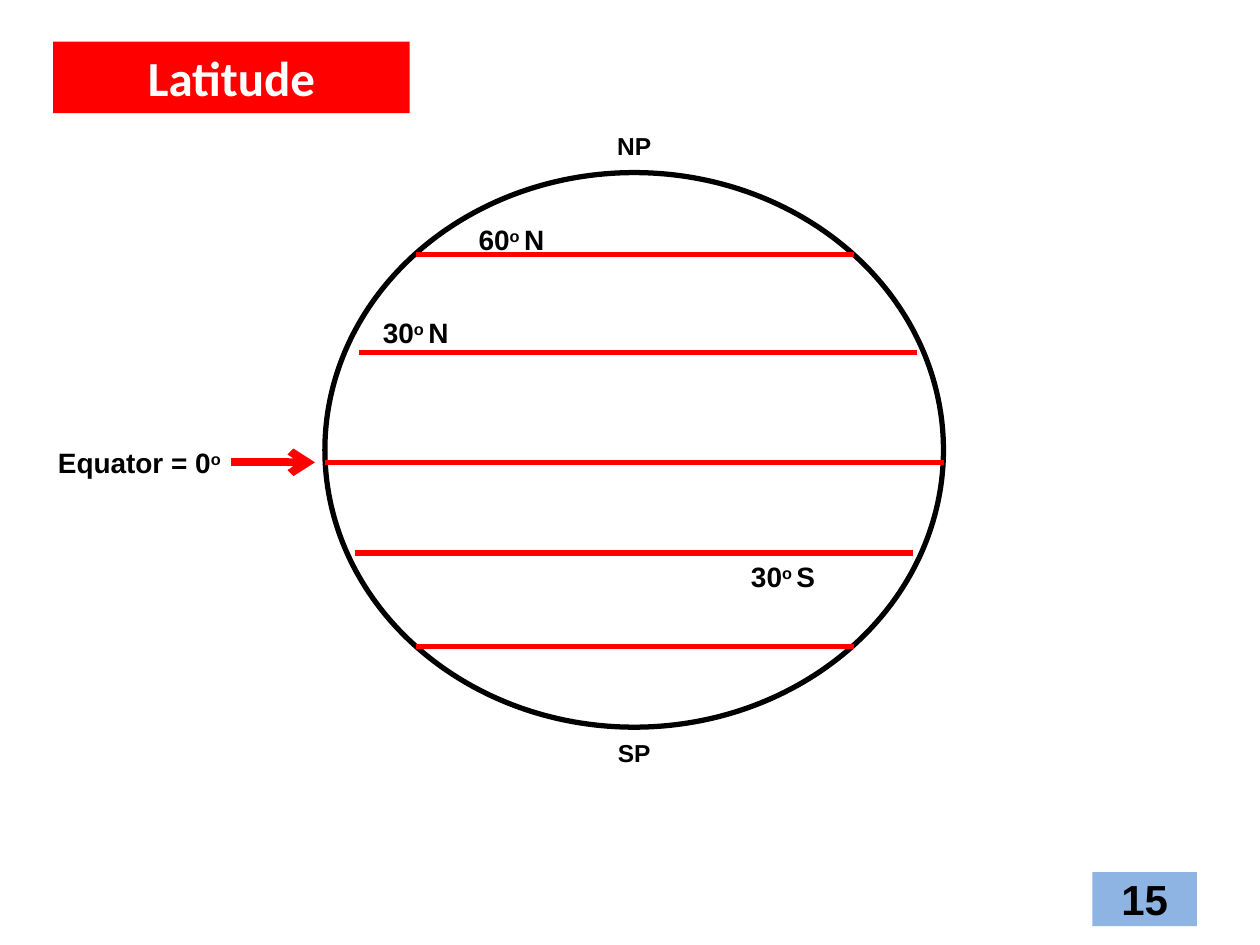
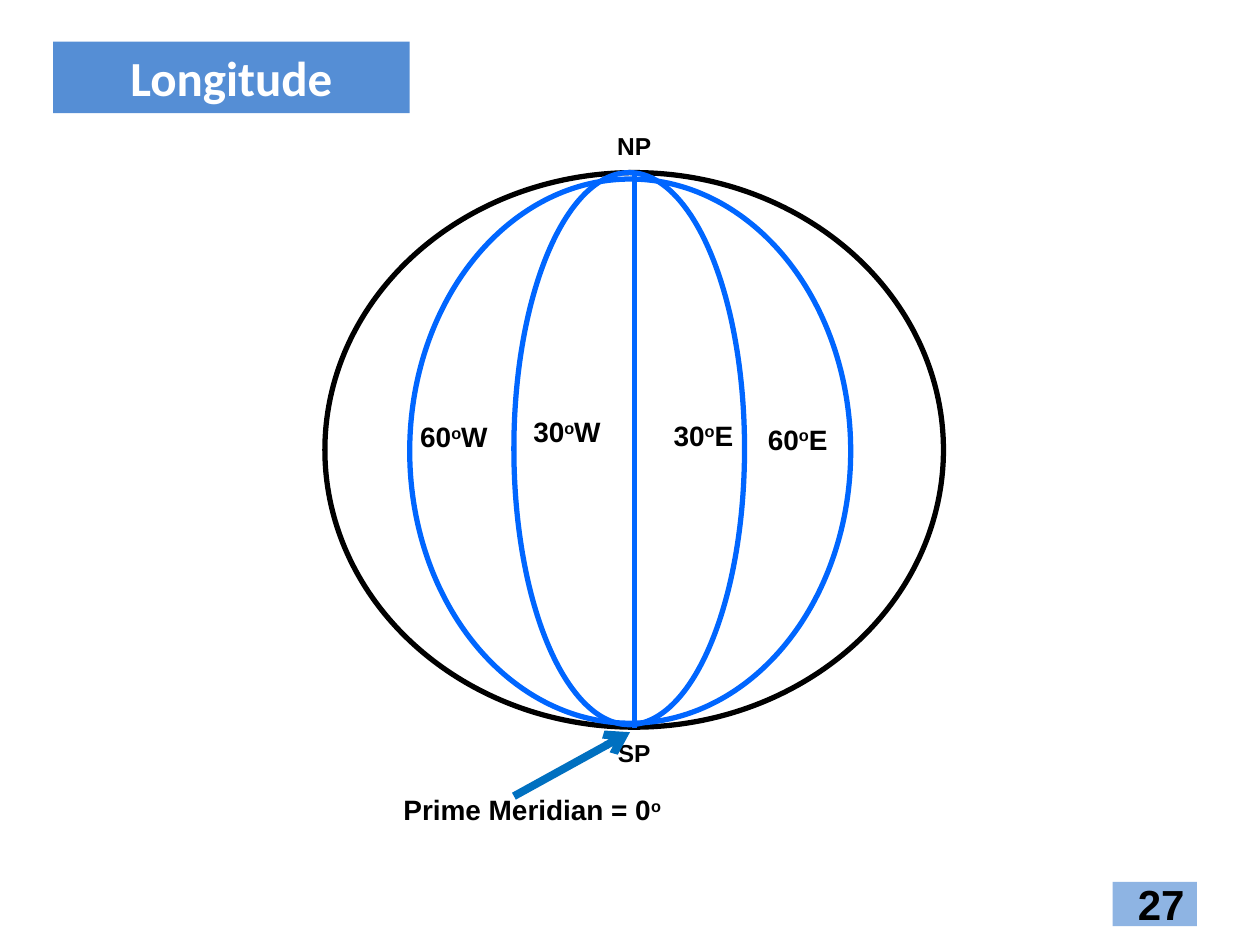
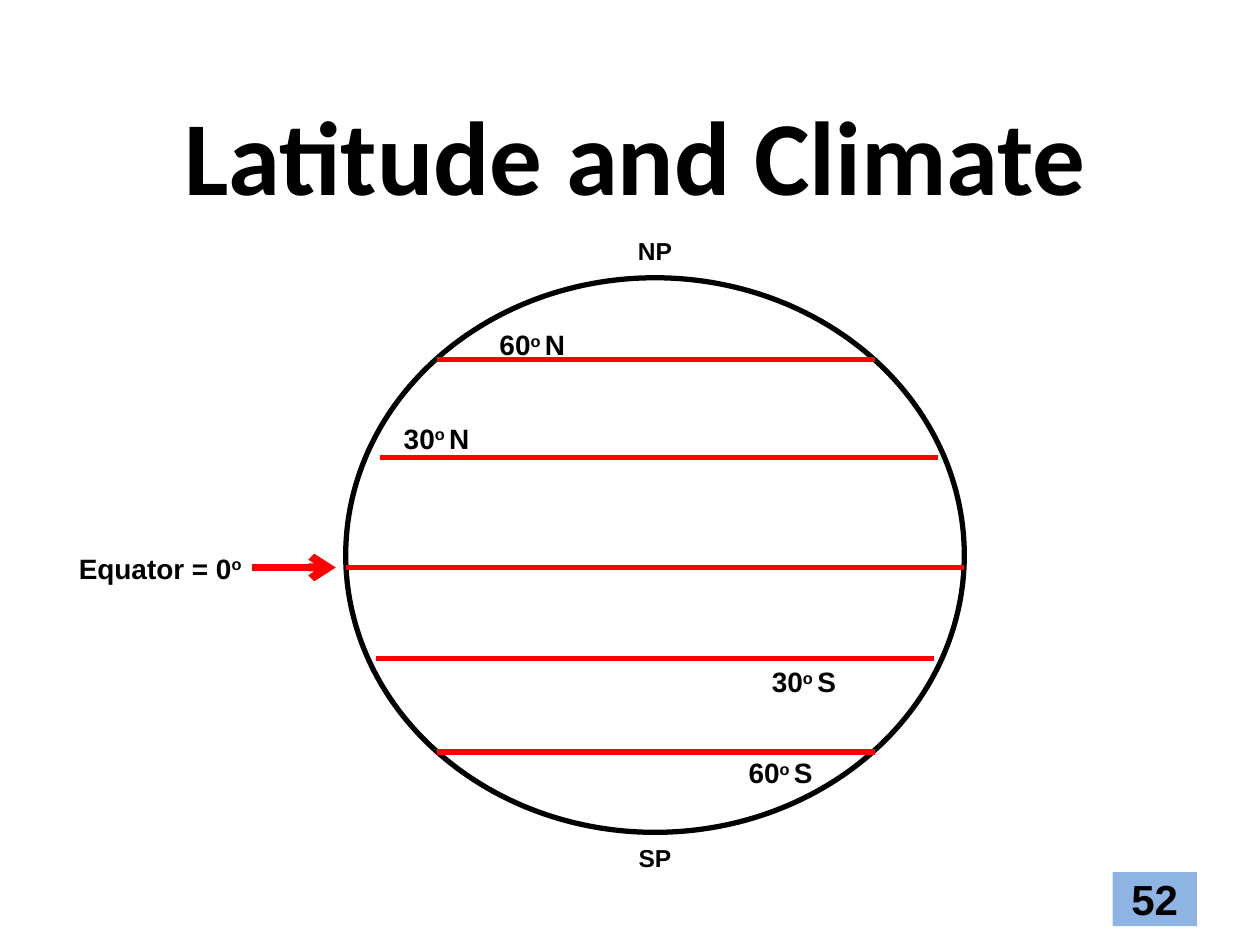
from dataclasses import dataclass

from lxml import etree
from pptx import Presentation
from pptx.dml.color import RGBColor
from pptx.enum.shapes import MSO_CONNECTOR, MSO_SHAPE
from pptx.enum.text import MSO_ANCHOR, PP_ALIGN
from pptx.oxml.ns import qn
from pptx.util import Cm, Pt

RECT, OVAL = MSO_SHAPE.RECTANGLE, MSO_SHAPE.OVAL
STRAIGHT = MSO_CONNECTOR.STRAIGHT
LEFT, CENTER, RIGHT = PP_ALIGN.LEFT, PP_ALIGN.CENTER, PP_ALIGN.RIGHT
TOP, MIDDLE = MSO_ANCHOR.TOP, MSO_ANCHOR.MIDDLE


@dataclass(frozen=True)
class Theme:
    black: str = "000000"
    white: str = "FFFFFF"
    red: str = "FF0000"
    blue: str = "558ED5"
    meridian: str = "0066FF"
    pointer: str = "0070C0"
    badge: str = "8EB4E3"
    heading_font: str = "Calibri"
    body_font: str = "Arial"
    cover: int = 60
    heading: int = 28
    number: int = 24
    label: int = 16
    pole: int = 14
    thin: float = 3
    thick: float = 4.5


T = Theme()

BANNER = (1.07, 0.84, 7.19, 1.44)
COVER = (3.18, 1.7, 19.25, 2.82)
BADGE_RIGHT, BADGE_BOTTOM = 24.13, 18.67
GLOBE = (6.55, 3.48, 12.47, 11.18)
GLOBE_SHIFT = (0.42, 2.12)
AXIS_X = GLOBE[0] + GLOBE[2] / 2

POLES = [("NP", 2.54), ("SP", 14.78)]
POLE_SIZE = (2.21, 0.99)

PARALLELS = [
    (6.55, 9.32, 12.47),
    (8.38, 5.13, 8.84),
    (8.38, 13.04, 8.84),
    (7.16, 11.15, 11.25),
    (7.24, 7.11, 11.25),
]
LATITUDES = [("60^o ^N", 9.55, 4.39), ("30^o ^N", 7.62, 6.27), ("30^o ^S", 15.04, 11.18)]
SOUTH_60 = ("60^o ^S", 14.57, 13.02)
LATITUDE_SIZE = (2.95, 1.09)
EQUATOR = ("Equator = 0^o", (1.07, 8.89, 4.24, 0.99))
EQUATOR_ARROW = (4.65, 9.32, 6.35, 9.32)

MERIDIANS = [(10.36, 3.48, 4.65, 11.13), (8.26, 3.61, 8.89, 10.97)]
LONGITUDES = [
    ("30^o^W", 10.59, 8.26),
    ("30^o^E", 13.34, 8.33),
    ("60^o^W", 8.31, 8.36),
    ("60^o^E", 15.24, 8.41),
]
LONGITUDE_SIZE = (1.68, 1.88)
PRIME = ("Prime Meridian = 0^o", (6.78, 15.88, 7.9, 1.09))
PRIME_LINE = (AXIS_X, 3.51, AXIS_X, 14.68)
PRIME_ARROW = (10.36, 16.05, 12.7, 14.76)


def rgb(color):
    return RGBColor.from_string(color)


def write(sp, text, size=T.label, font=T.body_font, color=T.black,
          align=LEFT, anchor=TOP, inset=None, after=0):
    tf = sp.text_frame
    tf.word_wrap = True
    tf.vertical_anchor = anchor
    if inset is not None:
        tf.margin_left = tf.margin_right = tf.margin_top = tf.margin_bottom = Cm(inset)
    p = tf.paragraphs[0]
    p.alignment = align
    p.space_after = Pt(after)
    for i, part in enumerate(text.split("^")):
        r = p.add_run()
        r.text = part
        r.font.size = Pt(size)
        r.font.name = font
        r.font.bold = True
        r.font.color.rgb = rgb(color)
        if i % 2:
            r.font._element.set("baseline", "30000")


def add_label(shapes, text, box, **fmt):
    sp = shapes.add_textbox(*map(Cm, box))
    write(sp, text, **{"inset": 0.1, "after": 10, **fmt})


def add_block(shapes, text, box, fill, **fmt):
    sp = shapes.add_shape(RECT, *map(Cm, box))
    sp.shadow.inherit = False
    sp.fill.solid()
    sp.fill.fore_color.rgb = rgb(fill)
    sp.line.fill.background()
    write(sp, text, **fmt)


def add_ring(shapes, box, color):
    sp = shapes.add_shape(OVAL, *map(Cm, box))
    sp.shadow.inherit = False
    sp.fill.background()
    sp.line.color.rgb = rgb(color)
    sp.line.width = Pt(T.thin)


def add_line(shapes, ends, color, width=T.thin, arrow=False):
    cn = shapes.add_connector(STRAIGHT, *map(Cm, ends))
    cn.line.color.rgb = rgb(color)
    cn.line.width = Pt(width)
    spPr = cn._element.spPr
    if arrow:
        etree.SubElement(spPr.find(qn("a:ln")), qn("a:tailEnd"), type="arrow")
    etree.SubElement(spPr, qn("a:effectLst"))


def add_banner(shapes, text, fill):
    add_block(shapes, text, BANNER, fill, size=T.heading, font=T.heading_font,
              color=T.white, align=CENTER)


def add_badge(shapes, number, w, h, align=CENTER):
    box = (BADGE_RIGHT - w, BADGE_BOTTOM - h, w, h)
    add_block(shapes, number, box, T.badge, size=T.number, align=align, anchor=MIDDLE)


def add_globe(shapes):
    add_ring(shapes, GLOBE, T.black)
    w, h = POLE_SIZE
    for text, y in POLES:
        add_label(shapes, text, (AXIS_X - w / 2, y, w, h), size=T.pole, align=CENTER)


def add_latitudes(shapes, labels):
    add_globe(shapes)
    for x, y, length in PARALLELS:
        add_line(shapes, (x, y, x + length, y), T.red)
    for text, x, y in labels:
        add_label(shapes, text, (x, y, *LATITUDE_SIZE))
    add_label(shapes, *EQUATOR)
    add_line(shapes, EQUATOR_ARROW, T.red, T.thick, arrow=True)


def add_longitudes(shapes):
    add_globe(shapes)
    add_line(shapes, PRIME_LINE, T.meridian)
    for box in MERIDIANS:
        add_ring(shapes, box, T.meridian)
    add_line(shapes, PRIME_ARROW, T.pointer, T.thick, arrow=True)
    add_label(shapes, *PRIME, align=CENTER)
    for text, x, y in LONGITUDES:
        add_label(shapes, text, (x, y, *LONGITUDE_SIZE), align=CENTER)


def main():
    prs = Presentation()
    prs.slide_width, prs.slide_height = Cm(25.4), Cm(19.05)
    latitude, longitude, climate = (
        prs.slides.add_slide(prs.slide_layouts[6]).shapes for _ in range(3))

    add_latitudes(latitude, LATITUDES)
    add_banner(latitude, "Latitude", T.red)
    add_badge(latitude, "15", 2.11, 1.09)

    add_longitudes(longitude)
    add_banner(longitude, "Longitude", T.blue)
    add_badge(longitude, "27", 1.7, 0.89, align=RIGHT)

    add_badge(climate, "52", 1.7, 1.09)
    add_label(climate, "Latitude and Climate", COVER, size=T.cover,
              font=T.heading_font, align=CENTER, inset=None, after=0)
    group = climate.add_group_shape()
    add_latitudes(group.shapes, LATITUDES + [SOUTH_60])
    dx, dy = map(Cm, GLOBE_SHIFT)
    group.left += dx
    group.top += dy

    prs.save("out.pptx")


if __name__ == "__main__":
    main()
